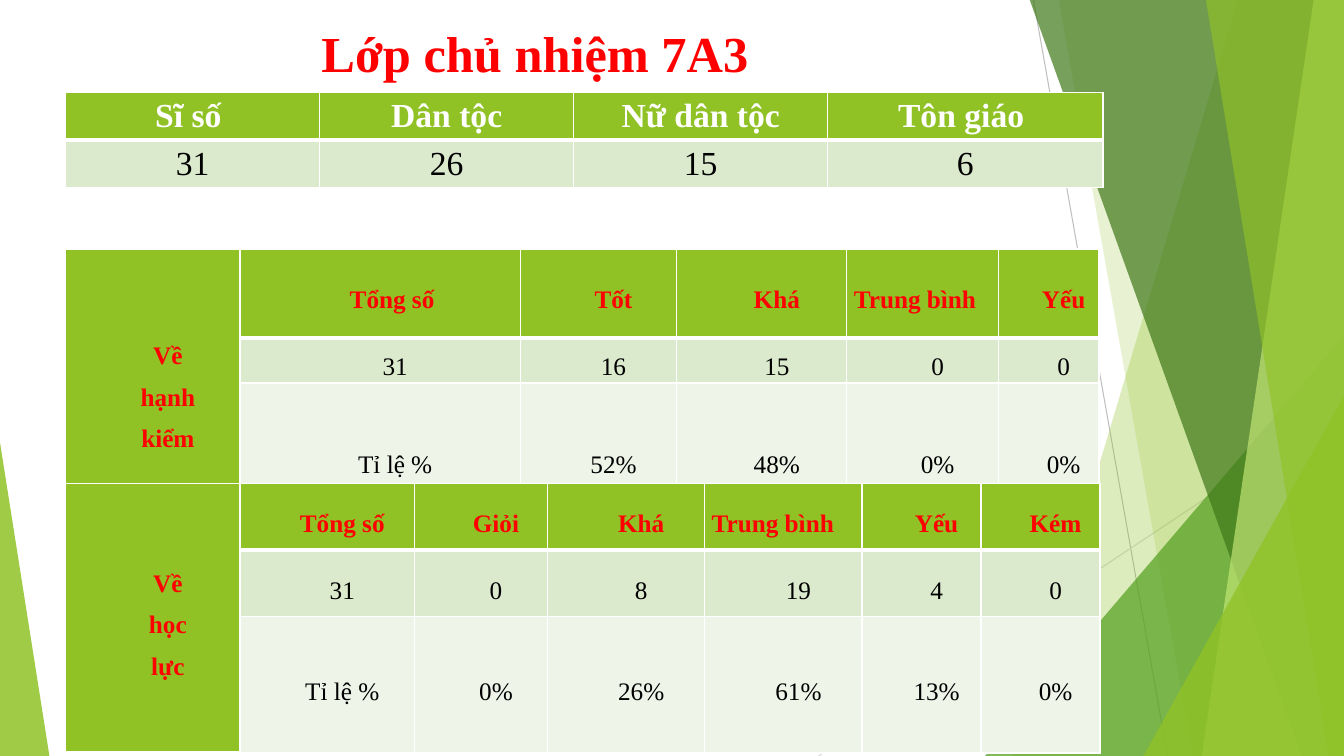
from lxml.etree import SubElement
from pptx import Presentation
from pptx.dml.color import RGBColor
from pptx.enum.shapes import MSO_CONNECTOR, MSO_SHAPE
from pptx.enum.text import MSO_ANCHOR, PP_ALIGN
from pptx.oxml.ns import qn
from pptx.util import Inches, Pt

W, H = 13.33, 7.5
FONT = "Times New Roman"
COLORS = {
    "white": "FFFFFF", "black": "000000", "red": "FF0000",
    "lime": "90C226", "green": "54A021", "forest": "3F7819", "pale": "C0E474",
    "band1": "DBE9CD", "band2": "EEF4E8",
    "line1": "BFBFBF", "line2": "D9D9D9",
}
ROW_FILLS = ["lime", "band1", "band2"]


def rgb(name):
    return RGBColor.from_string(COLORS[name])


def write(tf, text, size=18, color="black", bold=False, align=PP_ALIGN.CENTER,
          spacing=None, indent=None):
    """Fill a text frame, one paragraph for each line of text."""
    for i, line in enumerate(text.split("\n")):
        p = tf.add_paragraph() if i else tf.paragraphs[0]
        p.alignment = align
        if spacing:
            p.line_spacing = spacing
        if indent:
            p._p.get_or_add_pPr().set("indent", str(Inches(indent)))
        r = p.add_run()
        r.text = line
        r.font.name, r.font.size, r.font.bold = FONT, Pt(size), bold
        r.font.color.rgb = rgb(color)


def tint(sp, color, opacity):
    """Give a shape a see-through fill and no outline or shadow."""
    sp.shadow.inherit = False
    sp.line.fill.background()
    sp.fill.solid()
    sp.fill.fore_color.rgb = rgb(color)
    clr = sp._element.spPr.find(qn("a:solidFill"))[0]
    SubElement(clr, qn("a:alpha")).set("val", str(opacity * 1000))


def add_thin_line(s, start, end, color):
    line = s.shapes.add_connector(MSO_CONNECTOR.STRAIGHT,
                                  *(Inches(v) for v in start + end))
    line.line.color.rgb = rgb(color)
    line.line.width = Pt(0.75)
    SubElement(line._element.spPr, qn("a:effectLst"))


def add_ray(s, top_x, bottom_x, color, opacity):
    """Area between a slanted edge and the right side of the slide."""
    corners = [(top_x, -0.01), (W, -0.01), (W, H), (bottom_x, H)]
    points = [(Inches(x), Inches(y)) for x, y in corners]
    builder = s.shapes.build_freeform(*points[0])
    builder.add_line_segments(points[1:], close=True)
    tint(builder.convert_to_shape(), color, opacity)


def add_peak(s, x, y, width, apex, color, opacity):
    """Triangle that stands on the bottom of the slide."""
    sp = s.shapes.add_shape(MSO_SHAPE.ISOSCELES_TRIANGLE, Inches(x), Inches(y),
                            Inches(width), Inches(H - y))
    sp.adjustments[0] = apex
    tint(sp, color, opacity)


def add_backdrop(s):
    add_thin_line(s, (10.25, 0), (11.58, H), "line1")
    add_thin_line(s, (W, 4.03), (8.12, H), "line2")
    add_ray(s, 12.28, 10.04, "lime", 30)
    add_ray(s, 10.5, 11.83, "lime", 20)
    add_peak(s, 9.77, 3.33, 3.56, 1, "green", 72)
    add_ray(s, 10.21, 12.91, "forest", 70)
    add_ray(s, 13.03, 11.92, "pale", 70)
    add_ray(s, 11.96, 13.18, "lime", 65)
    add_peak(s, 11.34, 3.93, 1.99, 1, "lime", 80)
    add_peak(s, 0, 4.39, 0.49, 0, "lime", 85)


def add_title(s, x, y, width, height, text):
    tf = s.shapes.add_textbox(Inches(x), Inches(y), Inches(width), Inches(height)).text_frame
    tf.word_wrap = True
    write(tf, text, size=36, color="red", bold=True, align=PP_ALIGN.LEFT)


def set_borders(cell, **widths):
    tc_pr = cell._tc.get_or_add_tcPr()
    for side in "LRTB":
        ln = SubElement(tc_pr, qn(f"a:ln{side}"), w=str(Pt(widths.get(side, 1))))
        fill = SubElement(ln, qn("a:solidFill"))
        SubElement(fill, qn("a:srgbClr"), val=COLORS["white"])


def add_grid(s, x, y, cols, heights):
    """Empty table with a green header row and light rows below."""
    table = s.shapes.add_table(len(heights), len(cols), Inches(x), Inches(y),
                               Inches(sum(cols)), Inches(sum(heights))).table
    for col, width in zip(table.columns, cols):
        col.width = Inches(width)
    for i, (row, height) in enumerate(zip(table.rows, heights)):
        row.height = Inches(height)
        for cell in row.cells:
            set_borders(cell, **({"B": 3}, {"T": 3}, {})[i])
            cell.fill.solid()
            cell.fill.fore_color.rgb = rgb(ROW_FILLS[i])
    return table


def add_class_table(s, x, y, cols, heights, rows):
    table = add_grid(s, x, y, cols, heights)
    for i, texts in enumerate(rows):
        for j, text in enumerate(texts):
            write(table.cell(i, j).text_frame, text, size=24,
                  color="black" if i else "white", bold=not i)


def add_rating_table(s, x, y, cols, heights, label, rows):
    """Table whose first column is one merged label cell."""
    table = add_grid(s, x, y, cols, heights)
    table.cell(0, 0).merge(table.cell(2, 0))
    cells = [(0, 0, label)]
    cells += [(i, j, text) for i, texts in enumerate(rows)
              for j, text in enumerate(texts, 1)]
    for i, j, text in cells:
        cell = table.cell(i, j)
        cell.vertical_anchor = MSO_ANCHOR.MIDDLE
        cell.margin_left = cell.margin_right = Inches(0.07)
        cell.margin_top = cell.margin_bottom = 0
        wide = text == "Trung bình"
        write(cell.text_frame, text, color="black" if i else "red", bold=not i,
              align=PP_ALIGN.LEFT if wide else PP_ALIGN.CENTER,
              spacing=1.5, indent=None if wide else 0.3)


def main():
    prs = Presentation()
    prs.slide_width, prs.slide_height = Inches(W), Inches(H)
    s = prs.slides.add_slide(prs.slide_layouts[6])
    add_backdrop(s)
    add_class_table(s, 0.65, 0.92, [2.52, 2.52, 2.52, 2.73], [0.47, 0.47], [
        ["Sĩ số ", "Dân tộc", "Nữ dân tộc", "Tôn giáo "],
        ["31", "26", "15", "6"],
    ])
    add_title(s, 3.09, 0.17, 5.04, 0.71, "Lớp chủ nhiệm 7A3")
    add_rating_table(
        s, 0.65, 2.47, [1.73, 2.78, 1.55, 1.69, 1.5, 1], [0.88, 0.44, 1.48],
        "Về\nhạnh\nkiểm", [
            ["Tổng số ", "Tốt", "Khá", "Trung bình", "Yếu"],
            ["31", "16", "15", "0", "0"],
            ["Tỉ lệ %", "52%", "48%", "0%", "0%"],
        ])
    add_rating_table(
        s, 0.65, 4.8, [1.73, 1.73, 1.32, 1.56, 1.56, 1.18, 1.18], [0.66, 0.66, 1.35],
        "Về\nhọc\nlực", [
            ["Tổng số", "Giỏi", "Khá", "Trung bình", "Yếu", "Kém"],
            ["31", "0", "8", "19", "4", "0"],
            ["Tỉ lệ %", "0%", "26%", "61%", "13%", "0%"],
        ])
    prs.save("out.pptx")


if __name__ == "__main__":
    main()
